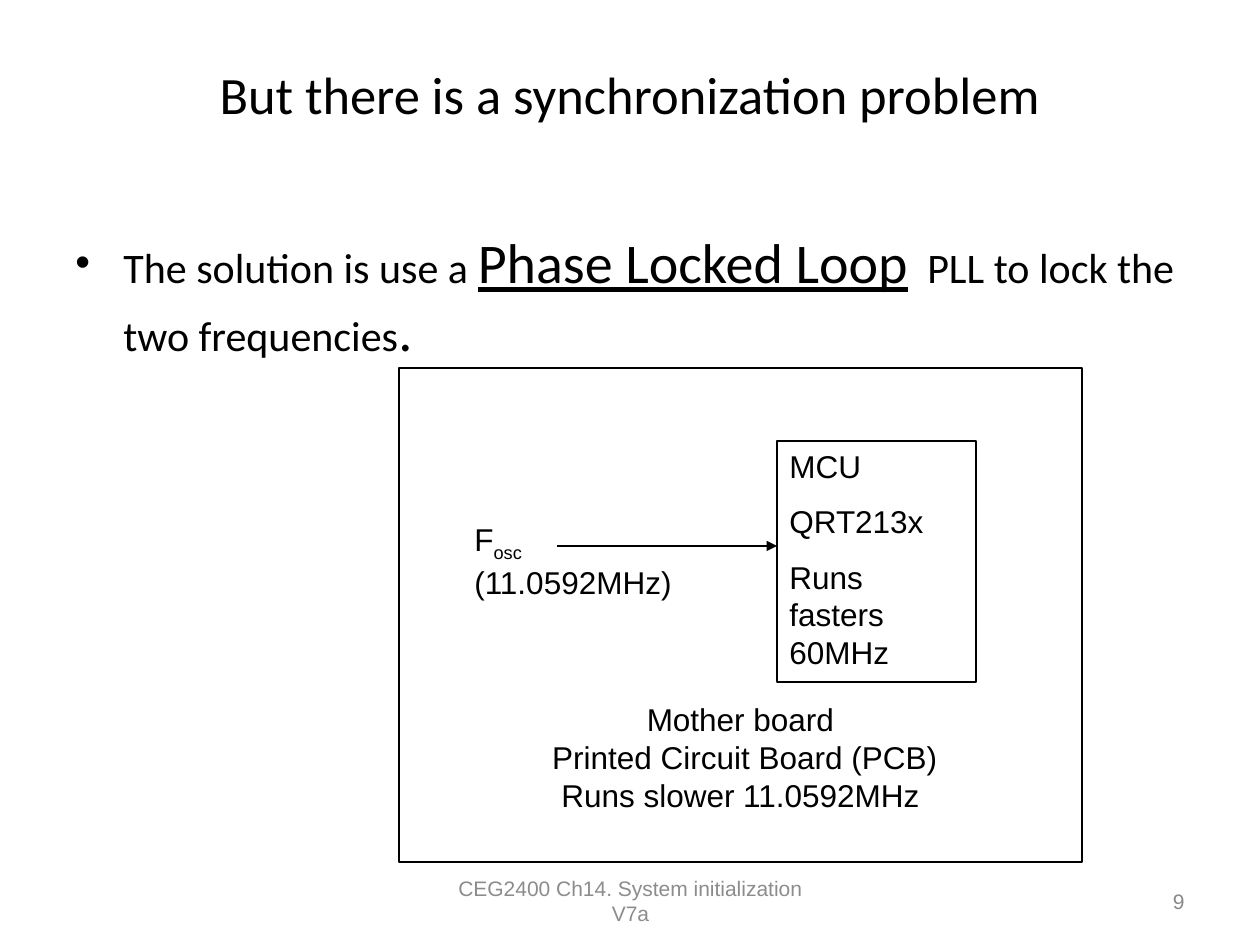
from pptx import Presentation, util as u
from pptx.dml.color import RGBColor
from pptx.enum import shapes, text
from pptx.oxml.ns import qn
from lxml import etree

PX = 914400 / 126  # EMU in one px
BLACK = RGBColor(0x00, 0x00, 0x00)
FOOTER_GRAY = RGBColor(0x8C, 0x8C, 0x8C)
NUMBER_GRAY = RGBColor(0x89, 0x89, 0x89)
LEFT, CENTER, RIGHT = text.PP_ALIGN.LEFT, text.PP_ALIGN.CENTER, text.PP_ALIGN.RIGHT
TOP, MIDDLE, BOTTOM = text.MSO_ANCHOR.TOP, text.MSO_ANCHOR.MIDDLE, text.MSO_ANCHOR.BOTTOM


def px(*lengths):
    return [round(length * PX) for length in lengths]


def write(box, paragraphs, size=18, font="Arial", color=BLACK, align=LEFT, anchor=TOP,
          wrap=True, before=0, top=6, bottom=6):
    """Fill box; each paragraph is a list of (wording, format) spans."""
    frame = box.text_frame
    frame.word_wrap = wrap
    frame.vertical_anchor = anchor
    frame.margin_top, frame.margin_bottom = px(top, bottom)
    for index, spans in enumerate(paragraphs):
        para = frame.add_paragraph() if index else frame.paragraphs[0]
        para.alignment = align
        para.space_before = u.Pt(before if index else 0)
        for wording, style in spans:
            span = para.add_run()
            span.text = wording
            span.font.name = font
            span.font.size = u.Pt(style.get("size", size))
            span.font.color.rgb = color
            if style.get("underline"):
                span.font.underline = True
            if "baseline" in style:
                span.font._element.set("baseline", str(style["baseline"]))


deck = Presentation()
deck.slide_width, deck.slide_height = px(1260, 945)
page = deck.slides.add_slide(deck.slide_layouts[6])

# Title
title = page.shapes.add_textbox(*px(63, 38, 1134, 157))
write(title, [[("But there is a synchronization problem", {})]], size=30, font="Calibri",
      align=CENTER, anchor=MIDDLE, bottom=51)

# Bulleted solution
solution = page.shapes.add_textbox(*px(63, 157, 1134, 624))
write(solution, [[("The solution is use a ", {}),
                  ("Phase Locked Loop", {"size": 32, "underline": True}),
                  ("  PLL to lock the two frequencies", {}),
                  (".", {"size": 32})]], size=24, font="Calibri", top=71)
bullet_format = solution.text_frame.paragraphs[0]._p.get_or_add_pPr()
indent = px(48)[0]
bullet_format.set("marL", str(indent))
bullet_format.set("indent", str(-indent))
etree.SubElement(bullet_format, qn("a:buFont")).set("typeface", "Arial")
etree.SubElement(bullet_format, qn("a:buChar")).set("char", "•")

# Mother board with the MCU on it
board_lines = ["Mother board", " Printed Circuit Board (PCB)", "Runs slower 11.0592MHz"]
mcu_lines = ["MCU", "QRT213x", "Runs fasters 60MHz"]
for place, lines, style in [
    ((399, 368, 683, 494), board_lines,
     dict(align=CENTER, anchor=BOTTOM, wrap=False, bottom=48)),
    ((777, 441, 199, 241), mcu_lines, dict(before=10)),
]:
    box = page.shapes.add_shape(shapes.MSO_SHAPE.RECTANGLE, *px(*place))
    box.shadow.inherit = False
    box.fill.background()
    box.line.color.rgb = BLACK
    box.line.width = u.Pt(0.75)
    write(box, [[(line, {})] for line in lines], **style)

# Oscillator label and its arrow to the MCU
oscillator = page.shapes.add_textbox(*px(462, 514, 224, 88))
write(oscillator, [[("F", {}), ("osc", {"baseline": -25000})], [("(11.0592MHz)", {})]],
      wrap=False)
arrow = page.shapes.add_connector(shapes.MSO_CONNECTOR.STRAIGHT, *px(557, 546, 777, 546))
arrow.line.color.rgb = BLACK
arrow.line.width = u.Pt(0.75)
etree.SubElement(arrow.line._get_or_add_ln(), qn("a:tailEnd")).set("type", "triangle")
etree.SubElement(arrow._element.spPr, qn("a:effectLst"))

# Footer and page number
footer = page.shapes.add_textbox(*px(431, 876, 399, 50))
write(footer, [[("CEG2400 Ch14. System initialization V7a", {})]], size=12,
      color=FOOTER_GRAY, align=CENTER, anchor=MIDDLE)
number = page.shapes.add_textbox(*px(903, 876, 294, 50))
write(number, [[("9", {})]], size=12, color=NUMBER_GRAY, align=RIGHT, anchor=MIDDLE)

deck.save("out.pptx")
